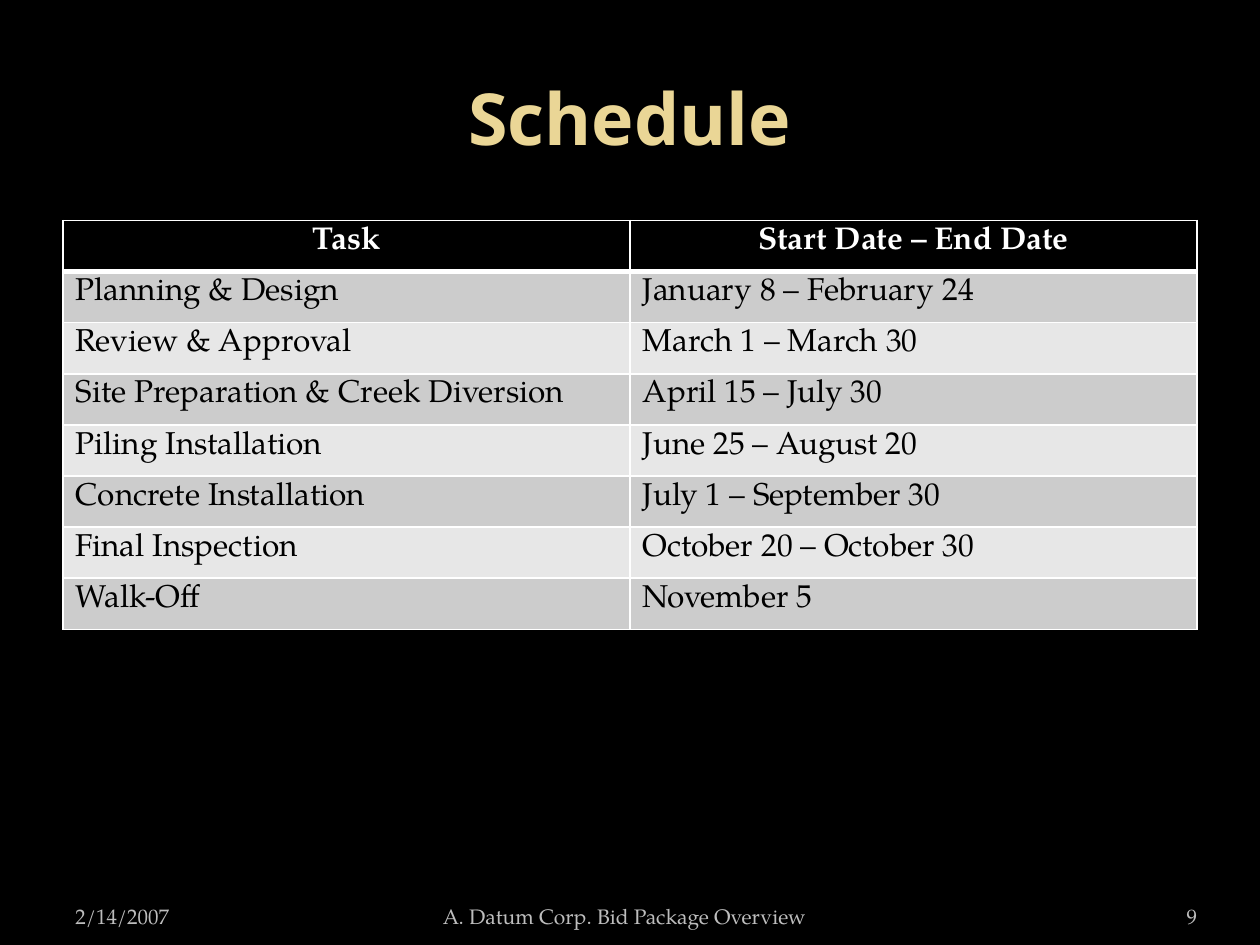
from lxml import etree
from pptx import Presentation
from pptx.dml.color import RGBColor
from pptx.enum.text import MSO_ANCHOR, PP_ALIGN
from pptx.oxml.ns import qn
from pptx.util import Pt

LEFT, CENTER, RIGHT = PP_ALIGN.LEFT, PP_ALIGN.CENTER, PP_ALIGN.RIGHT
MIDDLE, BOTTOM = MSO_ANCHOR.MIDDLE, MSO_ANCHOR.BOTTOM

TITLE = "Schedule"
SCHEDULE = [
    ("Task", "Start Date – End Date"),
    ("Planning & Design", "January 8 – February 24"),
    ("Review & Approval", "March 1 – March 30"),
    ("Site Preparation & Creek Diversion", "April 15 – July 30"),
    ("Piling Installation", "June 25 – August 20"),
    ("Concrete Installation", "July 1 – September 30"),
    ("Final Inspection", "October 20 – October 30"),
    ("Walk-Off", "November 5"),
]
# text, left, width, side inset, alignment
FOOTERS = [
    ("2/14/2007", 36, 168, 7.2, LEFT),
    ("A. Datum Corp. Bid Package Overview", 246, 258, 7.2, LEFT),
    ("9", 624, 60, 0, RIGHT),
]
COLORS = {
    "background": "000000",
    "title": "EAD696",
    "header": "000000",
    "header_text": "FFFFFF",
    "body_text": "000000",
    "odd_row": "CCCCCC",
    "even_row": "E7E7E7",
    "border": "FFFFFF",
    "footer": "BDBDBD",
}
TITLE_FONT, BODY_FONT = "Noto Sans", "TeX Gyre Pagella"
MARGIN, CONTENT_WIDTH = 36, 648
TABLE_TOP, ROW_HEIGHT = 126, 29.2
FOOTER_TOP, FOOTER_HEIGHT = 505.5, 28.8
THIN, THICK = 1, 3


def color(name):
    return RGBColor.from_string(COLORS[name])


def style(paragraph, font_name, size, color_name, alignment, bold=False):
    font = paragraph.font
    font.name, font.size, font.bold = font_name, Pt(size), bold
    font.color.rgb = color(color_name)
    paragraph.alignment = alignment


def set_borders(cell, top, bottom):
    properties = cell._tc.get_or_add_tcPr()
    widths = {"a:lnL": THIN, "a:lnR": THIN, "a:lnT": top, "a:lnB": bottom}
    for position, (tag, width) in enumerate(widths.items()):
        line = etree.Element(qn(tag), w=str(Pt(width)))
        fill = etree.SubElement(line, qn("a:solidFill"))
        etree.SubElement(fill, qn("a:srgbClr"), val=COLORS["border"])
        properties.insert(position, line)


def add_title(slide):
    title = slide.shapes.title
    title.left, title.top = Pt(MARGIN), Pt(21.6)
    title.width, title.height = Pt(CONTENT_WIDTH), Pt(90)
    title.text_frame.text = TITLE
    title.text_frame.vertical_anchor = MIDDLE
    style(title.text_frame.paragraphs[0], TITLE_FONT, 41, "title", CENTER, True)


def add_schedule(slide):
    row_count, column_count = len(SCHEDULE), len(SCHEDULE[0])
    table = slide.shapes.add_table(
        row_count, column_count, Pt(MARGIN), Pt(TABLE_TOP),
        Pt(CONTENT_WIDTH), Pt(ROW_HEIGHT * row_count)).table
    for row_index, row in enumerate(SCHEDULE):
        table.rows[row_index].height = Pt(ROW_HEIGHT)
        is_header = row_index == 0
        band = "header" if is_header else "odd_row" if row_index % 2 else "even_row"
        text_color = "header_text" if is_header else "body_text"
        for column_index, text in enumerate(row):
            cell = table.cell(row_index, column_index)
            cell.text = text
            cell.fill.solid()
            cell.fill.fore_color.rgb = color(band)
            set_borders(cell, THICK if row_index == 1 else THIN,
                        THICK if is_header else THIN)
            style(cell.text_frame.paragraphs[0], BODY_FONT, 18, text_color,
                  CENTER if is_header else LEFT, is_header)


def add_footers(slide):
    for text, left, width, inset, alignment in FOOTERS:
        box = slide.shapes.add_textbox(
            Pt(left), Pt(FOOTER_TOP), Pt(width), Pt(FOOTER_HEIGHT))
        frame = box.text_frame
        frame.word_wrap = True
        frame.vertical_anchor = BOTTOM
        frame.margin_left = frame.margin_right = Pt(inset)
        frame.text = text
        style(frame.paragraphs[0], BODY_FONT, 12, "footer", alignment)


def main():
    """Build the project schedule slide."""
    presentation = Presentation()
    presentation.slide_width, presentation.slide_height = Pt(720), Pt(540)
    slide = presentation.slides.add_slide(presentation.slide_layouts[5])
    slide.background.fill.solid()
    slide.background.fill.fore_color.rgb = color("background")
    add_title(slide)
    add_schedule(slide)
    add_footers(slide)
    presentation.save("out.pptx")


if __name__ == "__main__":
    main()
